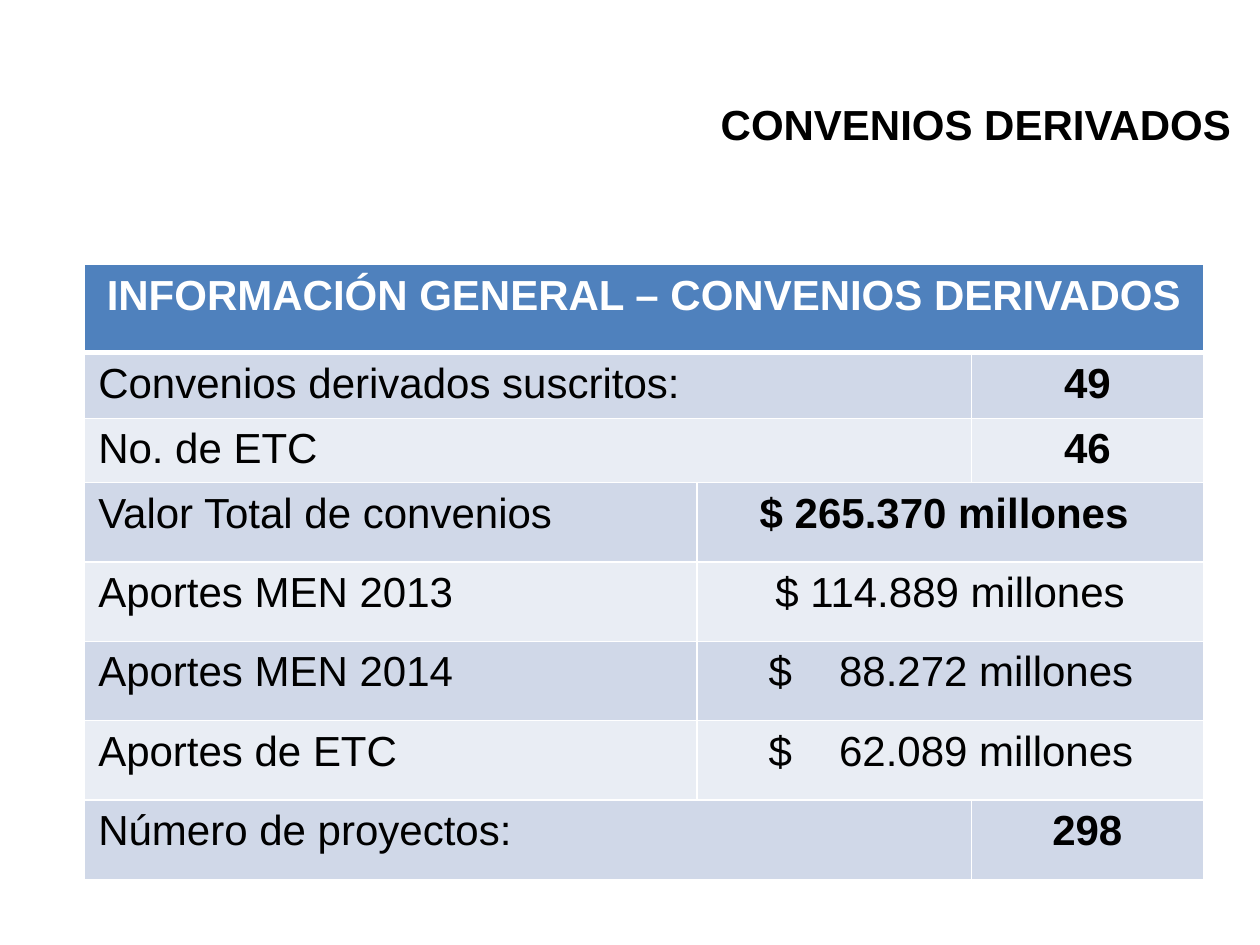
import dataclasses
import typing

import pptx
import pptx.dml.color
import pptx.enum.text
import pptx.oxml
import pptx.oxml.ns
import pptx.util

ALIGN = pptx.enum.text.PP_ALIGN
FONT = "Arial"
TEXT_SIZE = 24
WHITE = "FFFFFF"
BLACK = "000000"
HEADER_FILL = "4F81BD"
BAND_FILLS = ("D0D8E8", "E9EDF4")

SLIDE_WIDTH = 10
SLIDE_HEIGHT = 7.5
TABLE_LEFT = 0.67
TABLE_TOP = 2.1
COLUMN_WIDTHS = (4.86, 2.18, 1.84)
ROW_HEIGHTS = (0.7, 0.52, 0.51) + (0.63,) * 5
AMOUNT_MARGIN = 0.57
AMOUNT_TAB = 0.56


@dataclasses.dataclass(frozen=True)
class Row:
    label: str
    value: str
    value_column: int
    bold: bool = True


ROWS = (
    Row("Convenios derivados suscritos:", "49", 2),
    Row("No. de ETC", "46", 2),
    Row("Valor Total de convenios", "$ 265.370 millones ", 1),
    Row("Aportes MEN 2013", "$ 114.889 millones", 1, bold=False),
    Row("Aportes MEN 2014", "$\t88.272 millones", 1, bold=False),
    Row("Aportes de ETC", "$\t62.089 millones", 1, bold=False),
    Row("Número de proyectos:", "298", 2),
)


def color(value: str) -> pptx.dml.color.RGBColor:
    return pptx.dml.color.RGBColor.from_string(value)


def write(paragraph: typing.Any, text: str, alignment: ALIGN, bold: bool, text_color: str) -> None:
    paragraph.alignment = alignment
    run = paragraph.add_run()
    run.text = text
    run.font.name = FONT
    run.font.size = pptx.util.Pt(TEXT_SIZE)
    run.font.bold = bold
    run.font.color.rgb = color(text_color)


def add_tab_stop(paragraph: typing.Any, position: float) -> None:
    namespace = pptx.oxml.ns.nsdecls("a")
    tab_list = pptx.oxml.parse_xml(
        f'<a:tabLst {namespace}><a:tab pos="{pptx.util.Inches(position)}" algn="l"/></a:tabLst>'
    )
    paragraph._p.get_or_add_pPr().append(tab_list)


def set_borders(cell: typing.Any, top: int, bottom: int) -> None:
    properties = cell._tc.get_or_add_tcPr()
    namespace = pptx.oxml.ns.nsdecls("a")
    for side, points in (("L", 1), ("R", 1), ("T", top), ("B", bottom)):
        properties.append(pptx.oxml.parse_xml(
            f'<a:ln{side} {namespace} w="{pptx.util.Pt(points)}"><a:solidFill>'
            f'<a:srgbClr val="{WHITE}"/></a:solidFill></a:ln{side}>'
        ))


def fill_cell(cell: typing.Any, text: str, fill: str, alignment: ALIGN, bold: bool = False,
              text_color: str = BLACK, top: int = 1, bottom: int = 1) -> None:
    cell.margin_left = cell.margin_right = pptx.util.Inches(0.11)
    cell.margin_top = cell.margin_bottom = pptx.util.Inches(0.06)
    set_borders(cell, top, bottom)
    cell.fill.solid()
    cell.fill.fore_color.rgb = color(fill)
    paragraph = cell.text_frame.paragraphs[0]
    if "\t" in text:
        cell.margin_left = pptx.util.Inches(AMOUNT_MARGIN)
        add_tab_stop(paragraph, AMOUNT_TAB)
        alignment = ALIGN.LEFT
    write(paragraph, text, alignment, bold, text_color)


def merge(table: typing.Any, row: int, first: int, last: int) -> typing.Any:
    cell = table.cell(row, first)
    if last > first:
        cell.merge(table.cell(row, last))
    return cell


def add_title(slide: typing.Any) -> None:
    title = slide.shapes.title
    title.left, title.top, title.width, title.height = (
        pptx.util.Inches(length) for length in (4.76, 0.73, 5.11, 0.5)
    )
    frame = title.text_frame
    frame.word_wrap = False
    frame.auto_size = pptx.enum.text.MSO_AUTO_SIZE.NONE
    frame.vertical_anchor = pptx.enum.text.MSO_ANCHOR.MIDDLE
    write(frame.paragraphs[0], "CONVENIOS DERIVADOS", ALIGN.RIGHT, True, BLACK)


def add_summary_table(slide: typing.Any) -> None:
    lengths = (TABLE_LEFT, TABLE_TOP, sum(COLUMN_WIDTHS), sum(ROW_HEIGHTS))
    table = slide.shapes.add_table(
        len(ROW_HEIGHTS), len(COLUMN_WIDTHS), *map(pptx.util.Inches, lengths)
    ).table
    for column, width in zip(table.columns, COLUMN_WIDTHS):
        column.width = pptx.util.Inches(width)
    for row, height in zip(table.rows, ROW_HEIGHTS):
        row.height = pptx.util.Inches(height)

    last_column = len(COLUMN_WIDTHS) - 1
    fill_cell(merge(table, 0, 0, last_column), "INFORMACIÓN GENERAL – CONVENIOS DERIVADOS",
              HEADER_FILL, ALIGN.CENTER, True, WHITE, bottom=3)
    for index, row in enumerate(ROWS, start=1):
        fill = BAND_FILLS[(index - 1) % 2]
        top = 3 if index == 1 else 1
        label_cell = merge(table, index, 0, row.value_column - 1)
        value_cell = merge(table, index, row.value_column, last_column)
        fill_cell(label_cell, row.label, fill, ALIGN.LEFT, top=top)
        fill_cell(value_cell, row.value, fill, ALIGN.CENTER, row.bold, top=top)


def main() -> None:
    presentation = pptx.Presentation()
    presentation.slide_width = pptx.util.Inches(SLIDE_WIDTH)
    presentation.slide_height = pptx.util.Inches(SLIDE_HEIGHT)
    slide = presentation.slides.add_slide(presentation.slide_layouts.get_by_name("Title Only"))
    add_title(slide)
    add_summary_table(slide)
    presentation.save("out.pptx")


if __name__ == "__main__":
    main()
